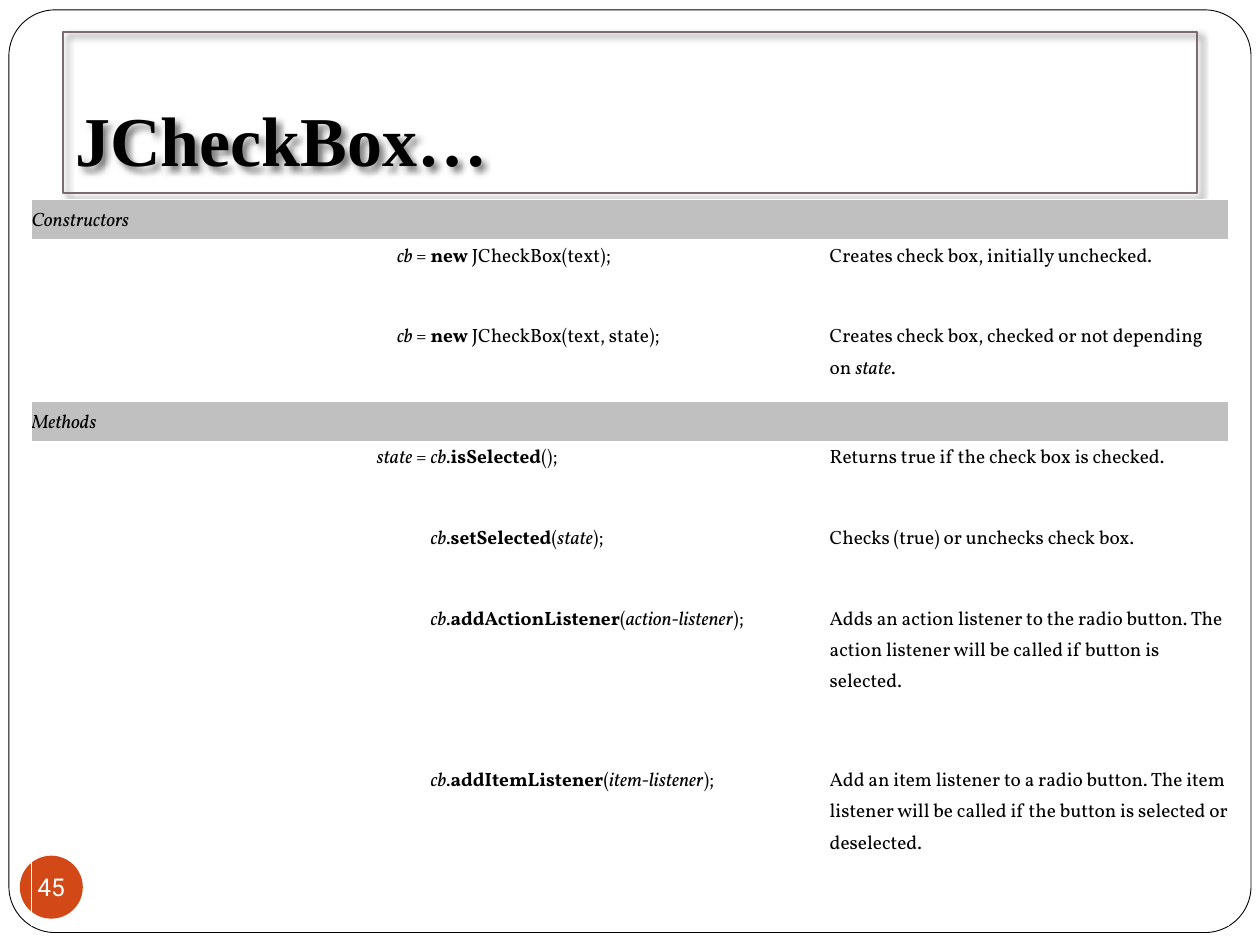
from lxml import etree
from pptx import Presentation
from pptx.dml.color import RGBColor
from pptx.enum.shapes import MSO_SHAPE as SHAPE
from pptx.enum.text import MSO_ANCHOR as ANCHOR, PP_ALIGN as ALIGN
from pptx.oxml.ns import qn
from pptx.util import Cm, Pt

BLACK = RGBColor(0x00, 0x00, 0x00)
WHITE = RGBColor(0xFF, 0xFF, 0xFF)
GRAY = RGBColor(0xC0, 0xC0, 0xC0)
ORANGE = RGBColor(0xD3, 0x48, 0x17)
MAUVE = RGBColor(0x7B, 0x6A, 0x70)

ROW = 0.813  # height of a heading row; the others are multiples of it


def bold(text):
    return text, {"bold": True}


def italic(text):
    return text, {"italic": True}


# Each row: height in units, then its cells; a row with one cell is a heading
ROWS = [
    (1, [[italic("Constructors")]]),
    (2, [[italic("cb"), " = "],
         [bold("new"), " JCheckBox(text);"],
         ["Creates check box, initially unchecked."]]),
    (2, [[italic("cb"), " = "],
         [bold("new"), " JCheckBox(text, state);"],
         ["Creates check box, checked or not depending on ",
          italic("state"), "."]]),
    (1, [[italic("Methods")]]),
    (2, [[italic("state"), " = "],
         [italic("cb"), ".", bold("isSelected"), "();"],
         ["Returns true if the check box is checked."]]),
    (2, [[],
         [italic("cb"), ".", bold("setSelected"), "(", italic("state"), ");"],
         ["Checks (true) or unchecks check box."]]),
    (4, [[],
         [italic("cb"), ".", bold("addActionListener"), "(",
          italic("action-listener"), ");"],
         ["Adds an action listener to the radio button. The action listener "
          "will be called if button is selected."]]),
    (4, [[],
         [italic("cb"), ".", bold("addItemListener"), "(",
          italic("item-listener"), ");"],
         ["Add an item listener to a radio button. The item listener will be "
          "called if the button is selected or deselected."]]),
]


def write(tf, runs, size, font, color=BLACK, align=ALIGN.LEFT, spacing=1.0):
    """Fill the first paragraph with runs: plain strings or (text, style)."""
    p = tf.paragraphs[0]
    p.alignment = align
    p.line_spacing = spacing
    for run in runs:
        text, style = (run, {}) if isinstance(run, str) else run
        r = p.add_run()
        r.text = text
        r.font.size = Pt(size)
        r.font.name = font
        r.font.color.rgb = color
        r.font.bold = style.get("bold", False)
        r.font.italic = style.get("italic", False)


def set_margins(obj, left=0, top=0, right=0, bottom=0):
    obj.margin_left, obj.margin_top = Cm(left), Cm(top)
    obj.margin_right, obj.margin_bottom = Cm(right), Cm(bottom)


def add_box(slide, kind, box, fill=None, line=None, width=1):
    sp = slide.shapes.add_shape(kind, *(Cm(v) for v in box))
    sp.shadow.inherit = False
    if fill is None:
        sp.fill.background()
    else:
        sp.fill.solid()
        sp.fill.fore_color.rgb = fill
    if line is None:
        sp.line.fill.background()
    else:
        sp.line.color.rgb = line
        sp.line.width = Pt(width)
    return sp


def add_shadow(sp):
    """Soft shadow; with no fill it falls from the outline and the text."""
    effects = sp._element.spPr.find(qn("a:effectLst"))
    shadow = etree.SubElement(effects, qn("a:outerShdw"), blurRad="50800",
                              dist="38100", dir="2700000", algn="tl")
    color = etree.SubElement(shadow, qn("a:srgbClr"), val="000000")
    etree.SubElement(color, qn("a:alpha"), val="50000")


def add_frame(slide, box):
    sp = add_box(slide, SHAPE.ROUNDED_RECTANGLE, box, WHITE, BLACK, 0.5)
    sp.adjustments[0] = 0.05


def add_title(slide, box):
    sp = add_box(slide, SHAPE.RECTANGLE, box, line=MAUVE, width=1.25)
    add_shadow(sp)
    tf = sp.text_frame
    tf.word_wrap = True
    tf.vertical_anchor = ANCHOR.BOTTOM
    set_margins(tf, 0.25, 0.13, 0.25, 0.25)
    write(tf, [bold("JCheckBox…")], 40, "Times New Roman")


def add_page_number(slide, box):
    tf = add_box(slide, SHAPE.OVAL, box, ORANGE).text_frame
    tf.word_wrap = False
    tf.vertical_anchor = ANCHOR.MIDDLE
    set_margins(tf)
    write(tf, ["45"], 14, "Roboto", WHITE, ALIGN.CENTER)


def add_reference_table(slide, left, top, width):
    height = ROW * sum(units for units, _ in ROWS)
    table = slide.shapes.add_table(len(ROWS), 3, Cm(left), Cm(top),
                                   Cm(width), Cm(height)).table
    table.first_row = table.horz_banding = False
    for row, (units, cells) in zip(table.rows, ROWS):
        row.height = Cm(units * ROW)
        heading = len(cells) == 1
        for cell in row.cells:
            set_margins(cell)
            cell.fill.background()
        if heading:
            first = row.cells[0]
            first.merge(row.cells[2])
            first.vertical_anchor = ANCHOR.MIDDLE
            first.fill.solid()
            first.fill.fore_color.rgb = GRAY
        for i, runs in enumerate(cells):
            align = ALIGN.RIGHT if i == 0 and not heading else ALIGN.LEFT
            write(row.cells[i].text_frame, runs, 11, "Vollkorn",
                  align=align, spacing=1.15)


def main():
    prs = Presentation()
    prs.slide_width, prs.slide_height = Cm(25.4), Cm(19.05)
    slide = prs.slides.add_slide(prs.slide_layouts[6])
    add_frame(slide, (0.18, 0.2, 25.04, 18.6))
    add_title(slide, (1.27, 0.64, 22.86, 3.25))
    add_page_number(slide, (0.4, 17.25, 1.27, 1.27))
    add_reference_table(slide, 0.64, 4.02, 24.13)
    prs.save("out.pptx")


if __name__ == "__main__":
    main()
